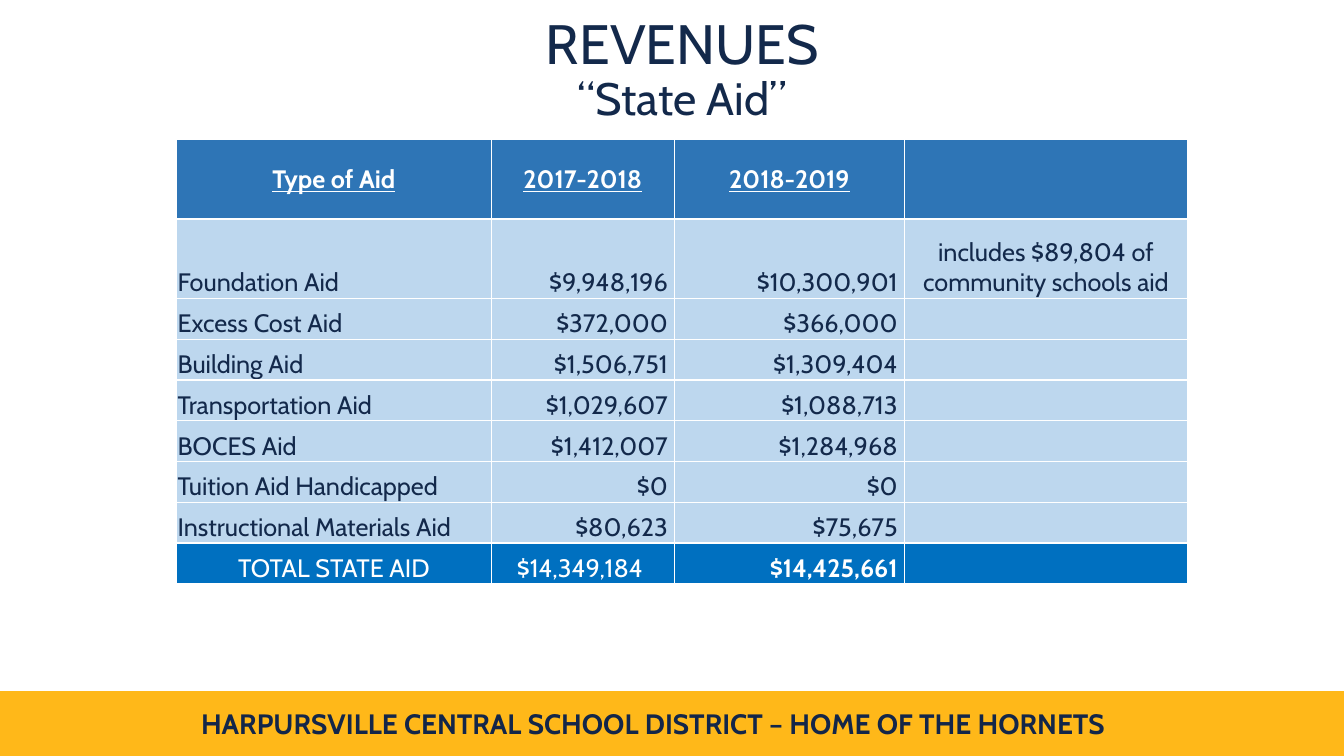
from dataclasses import dataclass

from lxml import etree
from pptx import Presentation
from pptx.dml.color import RGBColor
from pptx.enum import shapes, text
from pptx.oxml import ns
from pptx.util import Pt

NAVY = RGBColor(0x13, 0x29, 0x4B)
FOOTER_NAVY = RGBColor(0x13, 0x26, 0x49)
GOLD = RGBColor(0xFF, 0xB8, 0x19)
WHITE = RGBColor(0xFF, 0xFF, 0xFF)
HEADER_BLUE = RGBColor(0x2E, 0x75, 0xB6)
PALE_BLUE = RGBColor(0xBD, 0xD7, 0xEE)
TOTAL_BLUE = RGBColor(0x00, 0x70, 0xC0)
FONT = "Cabin"
LEFT, CENTER, RIGHT = text.PP_ALIGN.LEFT, text.PP_ALIGN.CENTER, text.PP_ALIGN.RIGHT
MIDDLE, BOTTOM = text.MSO_ANCHOR.MIDDLE, text.MSO_ANCHOR.BOTTOM
COLUMN_WIDTHS = (224.6, 131, 164.2, 202.4)
TALL_ROW, SHORT_ROW = 56.7, 29.15


@dataclass(frozen=True)
class RowStyle:
    fill: RGBColor
    color: RGBColor
    anchor: text.MSO_ANCHOR
    aligns: tuple
    bold: tuple = (False,) * 4
    underline: bool = False


@dataclass(frozen=True)
class AidRow:
    values: tuple
    style: RowStyle
    height: float = SHORT_ROW


HEADER = RowStyle(HEADER_BLUE, WHITE, MIDDLE, (CENTER,) * 4, (True,) * 4, True)
BODY = RowStyle(PALE_BLUE, NAVY, BOTTOM, (LEFT, RIGHT, RIGHT, CENTER))
TOTAL = RowStyle(TOTAL_BLUE, WHITE, BOTTOM, (CENTER, CENTER, RIGHT, CENTER),
                 (False, False, True, False))

AID_ROWS = (
    AidRow(("Type of Aid", "2017-2018", "2018-2019", ""), HEADER, TALL_ROW),
    AidRow(("Foundation Aid", "$9,948,196 ", "$10,300,901 ",
            "includes $89,804 of community schools aid"), BODY, TALL_ROW),
    AidRow(("Excess Cost Aid", "$372,000 ", "$366,000 ", ""), BODY),
    AidRow(("Building Aid", "$1,506,751 ", "$1,309,404 ", ""), BODY),
    AidRow(("Transportation Aid", "$1,029,607 ", "$1,088,713 ", ""), BODY),
    AidRow(("BOCES Aid", "$1,412,007 ", "$1,284,968 ", ""), BODY),
    AidRow(("Tuition Aid Handicapped", "$0 ", "$0 ", ""), BODY),
    AidRow(("Instructional Materials Aid", "$80,623 ", "$75,675 ", ""), BODY),
    AidRow(("TOTAL STATE AID", "$14,349,184 ", "$14,425,661 ", ""), TOTAL),
)


def add_text(para, words: str, *, size: float, color: RGBColor, align=CENTER,
             bold: bool = False, underline: bool = False) -> None:
    para.alignment = align
    span = para.add_run()
    span.text = words
    span.font.name = FONT
    span.font.size = Pt(size)
    span.font.color.rgb = color
    span.font.bold = bold
    span.font.underline = underline


def add_rectangle(page, left: float, top: float, width: float, height: float,
                  fill: RGBColor):
    box = page.shapes.add_shape(shapes.MSO_SHAPE.RECTANGLE, Pt(left), Pt(top),
                                Pt(width), Pt(height))
    box.shadow.inherit = False
    box.fill.solid()
    box.fill.fore_color.rgb = fill
    return box


def add_footer(page) -> None:
    band = add_rectangle(page, 0, 494, 960, 45.5, GOLD)
    band.line.color.rgb = GOLD
    band.line.width = Pt(1)
    box = page.shapes.add_textbox(Pt(126.7), Pt(501.1), Pt(679.7), Pt(31.5))
    frame = box.text_frame
    frame.word_wrap = True
    frame.auto_size = text.MSO_AUTO_SIZE.SHAPE_TO_FIT_TEXT
    add_text(frame.paragraphs[0],
             "HARPURSVILLE CENTRAL SCHOOL DISTRICT – HOME OF THE HORNETS",
             size=20, color=FOOTER_NAVY, bold=True)


def add_title(page) -> None:
    box = add_rectangle(page, 73.4, 13, 828, 74.9, WHITE)
    box.line.fill.background()
    box.text_frame.word_wrap = True
    box.text_frame.vertical_anchor = MIDDLE
    para = box.text_frame.paragraphs[0]
    para.line_spacing = 0.9
    add_text(para, "REVENUES", size=39.6, color=NAVY)
    para.add_line_break()
    add_text(para, "“State Aid”", size=32.4, color=NAVY)


def add_borders(cell) -> None:
    properties = cell._tc.get_or_add_tcPr()
    for side in ("a:lnL", "a:lnR", "a:lnT", "a:lnB"):
        line = etree.SubElement(properties, ns.qn(side), w=str(Pt(1)))
        fill = etree.SubElement(line, ns.qn("a:solidFill"))
        etree.SubElement(fill, ns.qn("a:srgbClr"), val=str(WHITE))


def fill_cell(cell, words: str, style: RowStyle, column: int) -> None:
    cell.margin_left = cell.margin_right = cell.margin_top = Pt(0.7)
    cell.margin_bottom = Pt(0)
    cell.vertical_anchor = style.anchor
    add_borders(cell)
    cell.fill.solid()
    cell.fill.fore_color.rgb = style.fill
    if words:
        add_text(cell.text_frame.paragraphs[0], words, size=18, color=style.color,
                 align=style.aligns[column], bold=style.bold[column],
                 underline=style.underline)


def add_aid_table(page) -> None:
    frame = page.shapes.add_table(
        len(AID_ROWS), len(COLUMN_WIDTHS), Pt(126.2), Pt(99.7),
        Pt(sum(COLUMN_WIDTHS)), Pt(sum(row.height for row in AID_ROWS)))
    table = frame.table
    table.horz_banding = False
    for column, width in zip(table.columns, COLUMN_WIDTHS):
        column.width = Pt(width)
    for row, aid in zip(table.rows, AID_ROWS):
        row.height = Pt(aid.height)
        for column, (cell, words) in enumerate(zip(row.cells, aid.values)):
            fill_cell(cell, words, aid.style, column)


def main() -> None:
    deck = Presentation()
    deck.slide_width, deck.slide_height = Pt(960), Pt(540)
    page = deck.slides.add_slide(deck.slide_layouts[6])
    add_footer(page)
    add_title(page)
    add_aid_table(page)
    deck.save("out.pptx")


if __name__ == "__main__":
    main()
